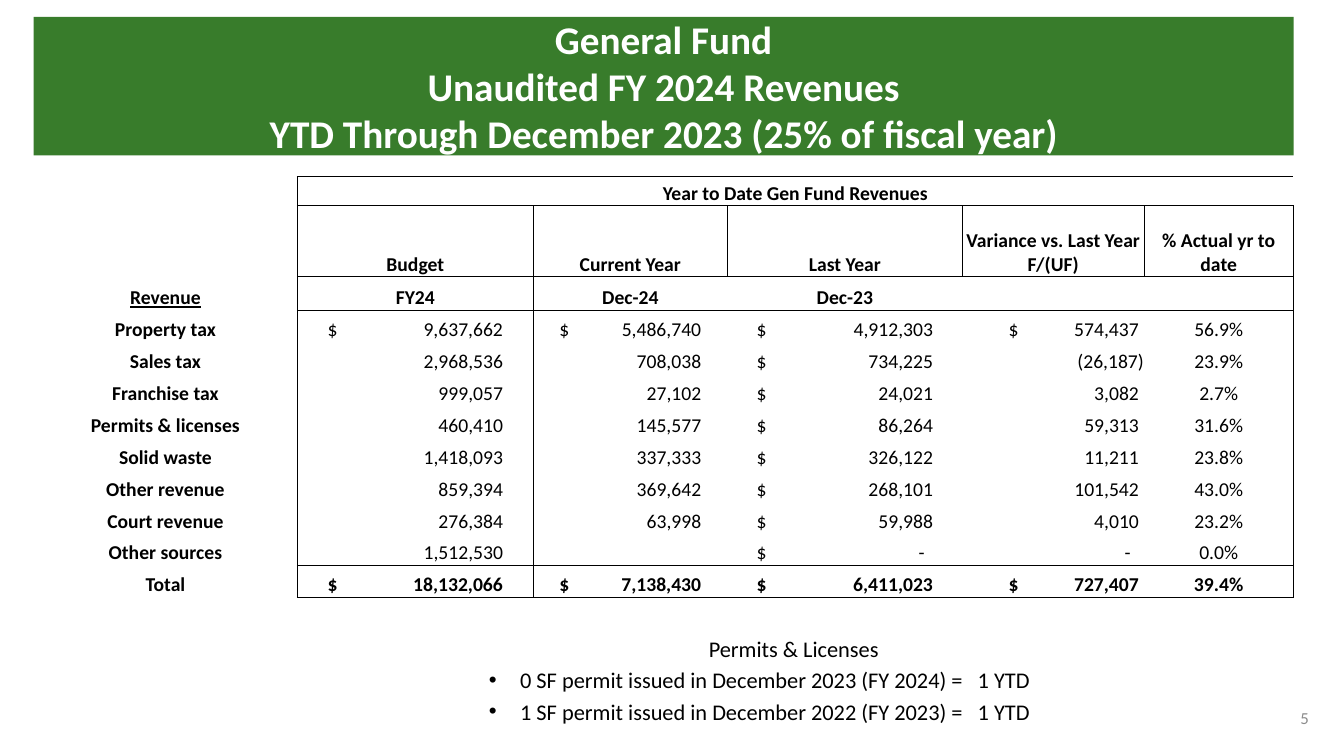
import pptx
import pptx.dml.color
import pptx.enum.text
import pptx.oxml.ns
import pptx.util
from lxml import etree

GREEN = pptx.dml.color.RGBColor(0x38, 0x7C, 0x2B)
WHITE = pptx.dml.color.RGBColor(0xFF, 0xFF, 0xFF)
BLACK = pptx.dml.color.RGBColor(0, 0, 0)
GREY = pptx.dml.color.RGBColor(0x8C, 0x8C, 0x8C)
ALIGN = pptx.enum.text.PP_ALIGN
ANCHOR = pptx.enum.text.MSO_ANCHOR
FONT = "Calibri"
PLAIN_TABLE = "{2D5ABB26-0587-4C30-8999-92F81FD0307C}"

SLIDE_WIDTH = pptx.util.Inches(13.33)
SLIDE_HEIGHT = pptx.util.Inches(7.5)
GRID_COLUMNS, GRID_ROWS = 160, 90

TITLE_BOX = (4, 2, 150, 16.5)
REVENUE_BOX = (4, 21, 150, 50.1)
PERMITS_BOX = (51, 75, 87, 12.25)
PAGE_BOX = (129, 83, 28, 4.8)

TITLE = "General Fund\vUnaudited FY 2024 Revenues\vYTD Through December 2023 (25% of fiscal year)"
PERMITS = [
    "Permits & Licenses",
    "0 SF permit issued in December 2023 (FY 2024) =   1 YTD",
    "1 SF permit issued in December 2022 (FY 2023) =   1 YTD",
]
REVENUES = [
    ["", "Year to Date Gen Fund Revenues", "", "", "", ""],
    ["", "Budget", "Current Year", "Last Year", "Variance vs. Last Year F/(UF)", "% Actual yr to date"],
    ["Revenue", "FY24", "Dec-24", "Dec-23", "", ""],
    ["Property tax", "$\t9,637,662", "$\t5,486,740", "$\t4,912,303", "$\t574,437", "56.9%"],
    ["Sales tax", "2,968,536", "708,038", "$\t734,225", "(26,187)", "23.9%"],
    ["Franchise tax", "999,057", "27,102", "$\t24,021", "3,082", "2.7%"],
    ["Permits & licenses", "460,410", "145,577", "$\t86,264", "59,313", "31.6%"],
    ["Solid waste", "1,418,093", "337,333", "$\t326,122", "11,211", "23.8%"],
    ["Other revenue", "859,394", "369,642", "$\t268,101", "101,542", "43.0%"],
    ["Court revenue", "276,384", "63,998", "$\t59,988", "4,010", "23.2%"],
    ["Other sources", "1,512,530", "", "$\t-", "-", "0.0%"],
    ["Total", "$\t18,132,066", "$\t7,138,430", "$\t6,411,023", "$\t727,407", "39.4%"],
]
COLUMN_SPANS = [31.4, 28.1, 23.1, 28, 21.6, 17.8]
ROW_SPANS = [3.5, 8.4, 4] + [3.8] * 9
HEADER_ROWS = 3
TOTAL_ROW = len(REVENUES) - 1
LAST_COLUMN = len(COLUMN_SPANS) - 1
AMOUNT_EDGES = {1: (3.6, 24.5), 2: (3.1, 20), 3: (3.5, 24.5), 4: (5.5, 21)}


def across(columns):
    """Return the length of a number of grid columns."""
    return round(SLIDE_WIDTH * columns / GRID_COLUMNS)


def down(rows):
    """Return the length of a number of grid rows."""
    return round(SLIDE_HEIGHT * rows / GRID_ROWS)


def place(region, box):
    """Move a region to its grid box."""
    left, top, width, height = box
    region.left, region.top = across(left), down(top)
    region.width, region.height = across(width), down(height)


def format_runs(paragraph, size, color, bold=False):
    """Give every run of a paragraph the same font."""
    for run in paragraph.runs:
        run.font.name = FONT
        run.font.size = pptx.util.Pt(size)
        run.font.bold = bold
        run.font.color.rgb = color


def add_node(parent, tag, **attributes):
    """Append a drawing element to a parent element."""
    return etree.SubElement(parent, pptx.oxml.ns.qn(tag), attributes)


def fill_title(slide, box):
    """Set the heading on its green band."""
    heading = slide.shapes.title
    place(heading, box)
    heading.fill.solid()
    heading.fill.fore_color.rgb = GREEN
    frame = heading.text_frame
    frame.text = TITLE
    frame.auto_size = pptx.enum.text.MSO_AUTO_SIZE.NONE
    frame.vertical_anchor = ANCHOR.MIDDLE
    frame.paragraphs[0].alignment = ALIGN.CENTER
    format_runs(frame.paragraphs[0], 28, WHITE, True)


def fill_permits(slide, box):
    """Set the permit notes as a heading with two bullets."""
    permits = slide.placeholders[1]
    place(permits, box)
    frame = permits.text_frame
    frame.text = "\n".join(PERMITS)
    frame.auto_size = pptx.enum.text.MSO_AUTO_SIZE.NONE
    for index, note in enumerate(frame.paragraphs):
        note.level = min(index, 1)
        note.alignment = ALIGN.JUSTIFY if index else ALIGN.CENTER
        properties = note._p.get_or_add_pPr()
        properties.set("marL", str(pptx.util.Inches(0.81) if index else 0))
        properties.set("indent", str(pptx.util.Inches(-0.31) if index else 0))
        if index:
            add_node(properties, "a:buFont", typeface="Arial")
            add_node(properties, "a:buChar", char="•")
        else:
            add_node(properties, "a:buNone")
        format_runs(note, 16, BLACK)


def add_borders(cell, row, column):
    """Draw the rules that belong to a cell's place in the table."""
    framed = column > 0
    sides = {
        "a:lnL": column == 1 or (framed and row == 1),
        "a:lnR": column in (0, LAST_COLUMN) or row == 1,
        "a:lnT": framed and row in (0, 1, 2, TOTAL_ROW),
        "a:lnB": framed and row in (0, 1, TOTAL_ROW - 1, TOTAL_ROW),
    }
    properties = cell._tc.get_or_add_tcPr()
    for side, ruled in sides.items():
        if ruled:
            line = add_node(properties, side, w=str(pptx.util.Pt(0.5)))
            add_node(add_node(line, "a:solidFill"), "a:srgbClr", val=str(BLACK))
    cell.fill.background()


def align_amount(cell, column):
    """Line up the dollar sign and the right edge of an amount."""
    dollar_edge, amount_edge = AMOUNT_EDGES[column]
    amount = cell.text_frame.paragraphs[0]
    if amount.text.endswith("-"):
        amount_edge -= 1
    elif amount.text.endswith(")"):
        amount_edge = COLUMN_SPANS[column]
    if amount.text.startswith("$"):
        amount.alignment = ALIGN.LEFT
        cell.margin_left = across(dollar_edge)
        stops = add_node(amount._p.get_or_add_pPr(), "a:tabLst")
        add_node(stops, "a:tab", pos=str(across(amount_edge - dollar_edge)), algn="r")
    else:
        amount.alignment = ALIGN.RIGHT
        cell.margin_right = across(COLUMN_SPANS[column] - amount_edge)


def fill_cell(cell, text, row, column):
    """Write and format one cell of the revenue table."""
    cell.margin_left = cell.margin_right = cell.margin_top = cell.margin_bottom = 0
    cell.vertical_anchor = ANCHOR.BOTTOM
    cell.text_frame.text = text
    entry = cell.text_frame.paragraphs[0]
    entry.alignment = ALIGN.CENTER
    bold = column == 0 or row < HEADER_ROWS or row == TOTAL_ROW
    format_runs(entry, 14, BLACK, bold)
    if not text:
        entry._p.get_or_add_endParaRPr().set("sz", "1400")
    elif row >= HEADER_ROWS and column in AMOUNT_EDGES:
        align_amount(cell, column)
    add_borders(cell, row, column)


def add_revenues(slide, box):
    """Build the year-to-date revenue table."""
    left, top, width, height = box
    frame = slide.shapes.add_table(len(ROW_SPANS), len(COLUMN_SPANS), across(left),
                                   down(top), across(width), down(height))
    revenues = frame.table
    revenues.first_row = revenues.horz_banding = False
    revenues._tbl.tblPr.find(pptx.oxml.ns.qn("a:tableStyleId")).text = PLAIN_TABLE
    for column, span in zip(revenues.columns, COLUMN_SPANS):
        column.width = across(span)
    for row, span in zip(revenues.rows, ROW_SPANS):
        row.height = down(span)
    for row, entries in enumerate(REVENUES):
        for column, text in enumerate(entries):
            fill_cell(revenues.cell(row, column), text, row, column)
    revenues.cell(0, 1).merge(revenues.cell(0, LAST_COLUMN))
    revenues.cell(2, 0).text_frame.paragraphs[0].runs[0].font.underline = True


def add_page_number(slide, box):
    """Place the page number at the lower right."""
    page = slide.shapes.add_textbox(0, 0, 0, 0)
    place(page, box)
    frame = page.text_frame
    frame.word_wrap = True
    frame.vertical_anchor = ANCHOR.MIDDLE
    frame.text = "5"
    frame.paragraphs[0].alignment = ALIGN.RIGHT
    format_runs(frame.paragraphs[0], 12, GREY)


def main():
    """Build and save the revenue slide."""
    deck = pptx.Presentation()
    deck.slide_width, deck.slide_height = SLIDE_WIDTH, SLIDE_HEIGHT
    slide = deck.slides.add_slide(deck.slide_layouts[1])
    fill_title(slide, TITLE_BOX)
    add_page_number(slide, PAGE_BOX)
    fill_permits(slide, PERMITS_BOX)
    add_revenues(slide, REVENUE_BOX)
    deck.save("out.pptx")


if __name__ == "__main__":
    main()
